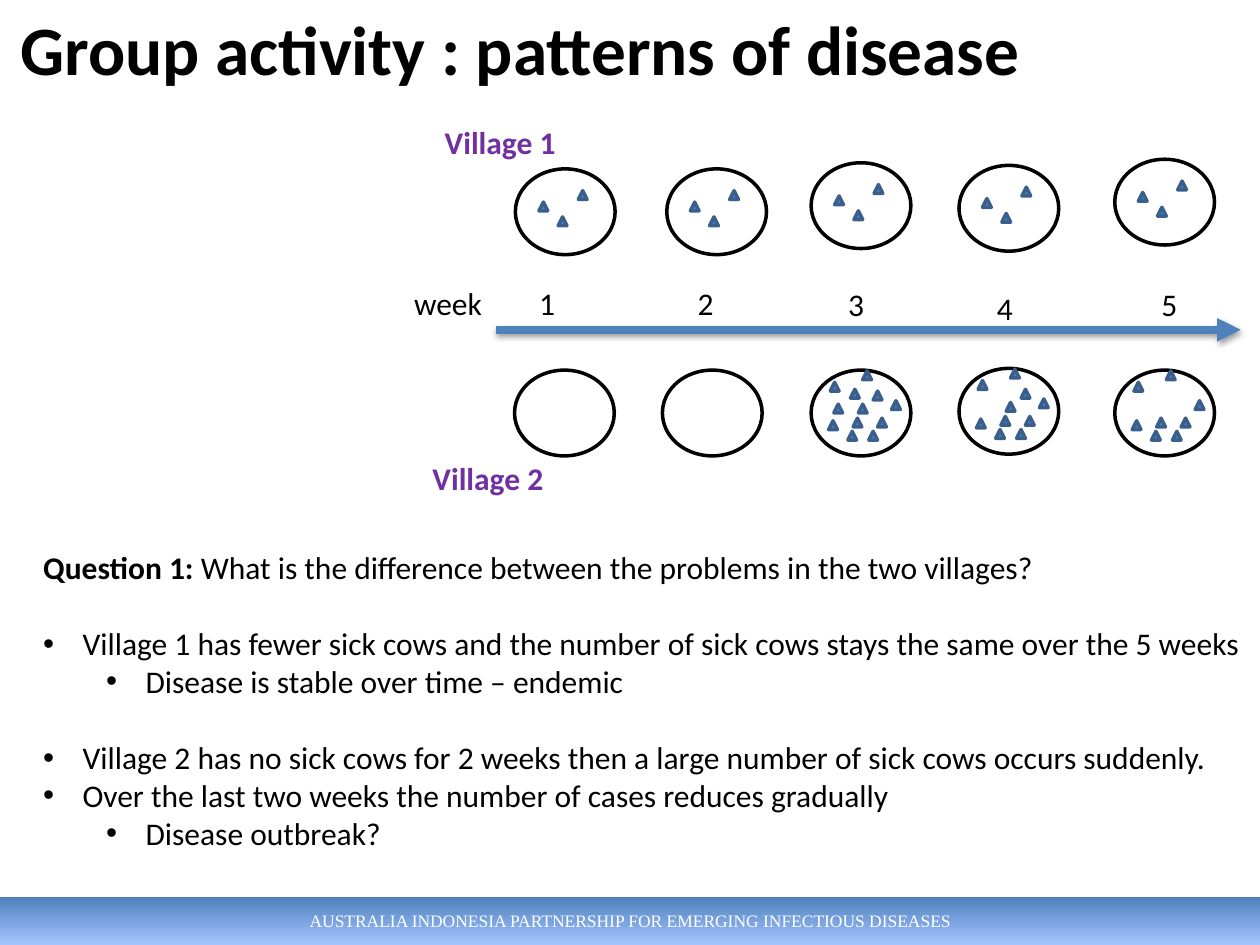
"""Build the group activity slide on patterns of disease in two villages."""
from dataclasses import dataclass
from typing import Any

import pptx
import pptx.dml.color
import pptx.enum.shapes
import pptx.enum.text
import pptx.oxml
import pptx.oxml.ns
import pptx.util
from pptx.enum.shapes import MSO_SHAPE
from pptx.enum.text import MSO_ANCHOR, PP_ALIGN

Pt = pptx.util.Pt
RGBColor = pptx.dml.color.RGBColor

BLACK = RGBColor(0x00, 0x00, 0x00)
WHITE = RGBColor(0xFF, 0xFF, 0xFF)
PURPLE = RGBColor(0x70, 0x30, 0xA0)
BLUE = RGBColor(0x4F, 0x81, 0xBD)
DARK_BLUE = RGBColor(0x3A, 0x5F, 0x8C)
PALE_BLUE = RGBColor(0xA4, 0xC4, 0xFF)

HERD_WIDTH, HERD_HEIGHT, CASE_SIZE = 57, 49, 5
Offsets = tuple[tuple[float, float], ...]
ENDEMIC: Offsets = ((13.5, 19), (24.5, 27.5), (36, 12.5))
OUTBREAK: Offsets = (
    (13, 19.5), (22.5, 11), (35.5, 12), (27, 19.5),
    (24, 27.5), (38, 27.5), (33, 35), (10, 29),
    (11, 7), (29.5, 0.5), (46, 17.5), (21, 35),
)


@dataclass(frozen=True)
class Herd:
    left: float
    top: float
    cases: Offsets


@dataclass(frozen=True)
class Label:
    text: str
    left: float
    top: float
    width: float
    color: RGBColor = BLACK
    bold: bool = False


@dataclass(frozen=True)
class Item:
    text: str
    level: int = 0
    lead: str = ""
    gap: float = 0


HERDS = (
    Herd(294.5, 96.5, ENDEMIC),
    Herd(381, 96.5, ENDEMIC),
    Herd(463.5, 93, ENDEMIC),
    Herd(548, 94.5, ENDEMIC),
    Herd(637, 91, ENDEMIC),
    Herd(294, 211.5, ()),
    Herd(378.5, 211.5, ()),
    Herd(463.5, 211.5, OUTBREAK),
    Herd(548, 210.5, OUTBREAK[2:]),
    Herd(637, 211.5, OUTBREAK[4:]),
)
LABELS = (
    Label("week", 229.5, 159, 54),
    Label("1", 301, 159, 24),
    Label("2", 391.5, 159, 24),
    Label("3", 477.5, 159.5, 24),
    Label("4", 562.5, 161.5, 24),
    Label("5", 656.5, 159.5, 24),
    Label("Village 1", 247, 66.5, 78.5, PURPLE, True),
    Label("Village 2", 240, 259, 78.5, PURPLE, True),
)
ITEMS = (
    Item("What is the difference between the problems in the two villages?",
         lead="Question 1: "),
    Item("Village 1 has fewer sick cows and the number of sick cows stays "
         "the same over the 5 weeks", gap=22),
    Item("Disease is stable over time – endemic", 1),
    Item("Village 2 has no sick cows for 2 weeks then a large number of sick "
         "cows occurs suddenly.", gap=22),
    Item("Over the last two weeks the number of cases reduces gradually"),
    Item("Disease outbreak?", 1),
)


def place(shape: Any, left: float, top: float, width: float, height: float) -> None:
    shape.left, shape.top = Pt(left), Pt(top)
    shape.width, shape.height = Pt(width), Pt(height)


def add_span(para: Any, text: str, size: float = 18, color: RGBColor = BLACK,
             bold: bool = False, face: str = "Calibri") -> None:
    span = para.add_run()
    span.text = text
    span.font.name = face
    span.font.size = Pt(size)
    span.font.bold = bold
    span.font.color.rgb = color


def add_mark(page: Any, kind: Any, left: float, top: float, width: float,
             height: float, fill: RGBColor, line: RGBColor) -> None:
    mark = page.shapes.add_shape(kind, Pt(left), Pt(top), Pt(width), Pt(height))
    mark.shadow.inherit = False
    mark.fill.solid()
    mark.fill.fore_color.rgb = fill
    mark.line.color.rgb = line
    mark.line.width = Pt(2)


def add_herd(page: Any, herd: Herd) -> None:
    add_mark(page, MSO_SHAPE.OVAL, herd.left, herd.top,
             HERD_WIDTH, HERD_HEIGHT, WHITE, BLACK)
    for across, down in herd.cases:
        add_mark(page, MSO_SHAPE.ISOSCELES_TRIANGLE, herd.left + across,
                 herd.top + down, CASE_SIZE, CASE_SIZE, BLUE, DARK_BLUE)


def add_label(page: Any, label: Label) -> None:
    box = page.shapes.add_textbox(Pt(label.left), Pt(label.top), Pt(label.width), Pt(29))
    box.text_frame.word_wrap = False
    add_span(box.text_frame.paragraphs[0], label.text, color=label.color, bold=label.bold)


def add_timeline(page: Any) -> None:
    arrow = page.shapes.add_connector(
        pptx.enum.shapes.MSO_CONNECTOR.STRAIGHT, Pt(283.5), Pt(188.5), Pt(709), Pt(188.5))
    arrow.line.color.rgb = BLUE
    arrow.line.width = Pt(4.5)
    namespace = pptx.oxml.ns.nsdecls("a")
    arrow.line._get_or_add_ln().append(
        pptx.oxml.parse_xml(f'<a:tailEnd {namespace} type="triangle"/>'))
    arrow._element.spPr.append(pptx.oxml.parse_xml(
        f'<a:effectLst {namespace}><a:outerShdw blurRad="{Pt(3.1)}" dist="{Pt(1.6)}" '
        'dir="5400000" rotWithShape="0"><a:srgbClr val="000000">'
        '<a:alpha val="38000"/></a:srgbClr></a:outerShdw></a:effectLst>'))


def add_footer(page: Any) -> None:
    band = page.shapes.add_shape(MSO_SHAPE.RECTANGLE, 0, Pt(512.5), Pt(720), Pt(27.5))
    band.shadow.inherit = False
    band.line.fill.background()
    band.fill.gradient()
    band.fill.gradient_angle = 270
    for stop, color, position in zip(band.fill.gradient_stops, (BLUE, PALE_BLUE), (0, 1)):
        stop.color.rgb = color
        stop.position = position
    band.text_frame.vertical_anchor = MSO_ANCHOR.MIDDLE
    para = band.text_frame.paragraphs[0]
    para.alignment = PP_ALIGN.CENTER
    add_span(para, "AUSTRALIA INDONESIA PARTNERSHIP FOR EMERGING INFECTIOUS DISEASES",
             10, WHITE, face="Times New Roman")


def fill_title(title: Any) -> None:
    place(title, 4.5, -0.5, 648, 55.5)
    title.text_frame.auto_size = pptx.enum.text.MSO_AUTO_SIZE.NONE
    title.text_frame.vertical_anchor = MSO_ANCHOR.MIDDLE
    para = title.text_frame.paragraphs[0]
    para.alignment = PP_ALIGN.LEFT
    add_span(para, "Group activity : patterns of disease", 39.6, bold=True)


def fill_body(body: Any) -> None:
    place(body, 17.5, 309.5, 706, 181.5)
    frame = body.text_frame
    frame.auto_size = pptx.enum.text.MSO_AUTO_SIZE.NONE
    namespace = pptx.oxml.ns.nsdecls("a")
    for index, item in enumerate(ITEMS):
        para = frame.add_paragraph() if index else frame.paragraphs[0]
        para.level = item.level
        indent = 0 if item.lead else 22.5
        bullet = "<a:buNone {}/>" if item.lead else '<a:buChar {} char="•"/>'
        properties = para._p.get_or_add_pPr()
        properties.set("marL", str(Pt(indent + 36 * item.level)))
        properties.set("indent", str(Pt(-indent)))
        properties.append(pptx.oxml.parse_xml(bullet.format(namespace)))
        para.space_before = Pt(item.gap)
        if item.lead:
            add_span(para, item.lead, bold=True)
        add_span(para, item.text)


def main() -> None:
    deck = pptx.Presentation()
    deck.slide_width, deck.slide_height = Pt(720), Pt(540)
    page = deck.slides.add_slide(deck.slide_layouts[1])
    add_footer(page)
    fill_title(page.shapes.title)
    add_timeline(page)
    for herd in HERDS:
        add_herd(page, herd)
    for label in LABELS:
        add_label(page, label)
    fill_body(page.placeholders[1])
    deck.save("out.pptx")


if __name__ == "__main__":
    main()
